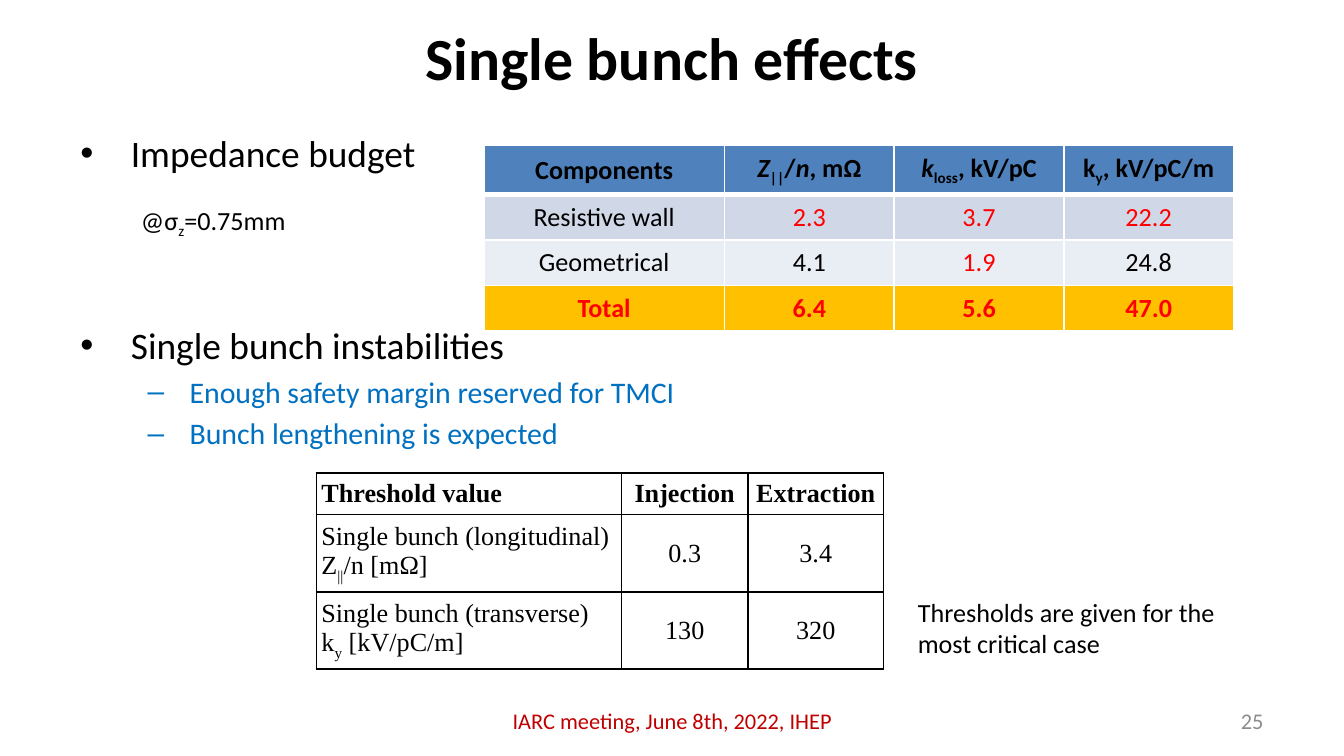
"""Build the slide on single bunch effects with its two tables."""
from lxml.etree import SubElement
from pptx import Presentation
from pptx.dml.color import RGBColor
from pptx.enum.text import MSO_ANCHOR as Anchor, PP_ALIGN as Align
from pptx.oxml import parse_xml
from pptx.oxml.ns import nsdecls, qn
from pptx.util import Pt

BLACK = RGBColor(0x00, 0x00, 0x00)
WHITE = RGBColor(0xFF, 0xFF, 0xFF)
RED = RGBColor(0xFF, 0x00, 0x00)
DARK_RED = RGBColor(0xC0, 0x00, 0x00)
GRAY = RGBColor(0x8C, 0x8C, 0x8C)
BLUE = RGBColor(0x00, 0x70, 0xC0)
HEADER_BLUE = RGBColor(0x4F, 0x81, 0xBD)
BAND_DARK = RGBColor(0xD0, 0xD8, 0xE8)
BAND_LIGHT = RGBColor(0xE9, 0xED, 0xF4)
GOLD = RGBColor(0xFF, 0xC0, 0x00)


def write(para, parts, size, color, bold=False, face="Calibri"):
    """Add runs; a part is plain text or a pair of text and 'sub' or 'italic'."""
    for part in [parts] if isinstance(parts, str) else parts:
        words, style = (part, "") if isinstance(part, str) else part
        span = para.add_run()
        span.text = words
        span.font.name, span.font.size = face, Pt(size)
        span.font.bold, span.font.color.rgb = bold, color
        if style == "italic":
            span.font.italic = True
        if style == "sub":
            span.font._element.set("baseline", "-25000")


def add_grid(page, left, top, widths, heights, border, margin):
    """Add an unstyled table with ruled cells and return it."""
    grid = page.shapes.add_table(len(heights), len(widths), Pt(left), Pt(top),
                                 Pt(sum(widths)), Pt(sum(heights))).table
    grid.first_row = grid.horz_banding = False
    for column, width in zip(grid.columns, widths):
        column.width = Pt(width)
    for row, height in zip(grid.rows, heights):
        row.height = Pt(height)
        for cell in row.cells:
            cell.vertical_anchor = Anchor.MIDDLE
            cell.margin_left = cell.margin_right = Pt(margin)
            cell.margin_top = cell.margin_bottom = Pt(min(margin, 3.6))
            cell.fill.background()
            for index, side in enumerate(("lnL", "lnR", "lnT", "lnB")):
                line = parse_xml(
                    f'<a:{side} {nsdecls("a")} w="{Pt(1)}"><a:solidFill>'
                    f'<a:srgbClr val="{border}"/></a:solidFill></a:{side}>')
                cell._tc.get_or_add_tcPr().insert(index, line)
    return grid


deck = Presentation()
deck.slide_width, deck.slide_height = Pt(720), Pt(405)
page = deck.slides.add_slide(deck.slide_layouts[5])

title = page.shapes.title
title.left, title.top, title.width, title.height = Pt(36), Pt(5), Pt(648), Pt(50.4)
title.text_frame.vertical_anchor = Anchor.MIDDLE
title.text_frame.paragraphs[0].alignment = Align.CENTER
write(title.text_frame.paragraphs[0], "Single bunch effects", 32, BLACK, True)

body = page.shapes.add_textbox(Pt(36), Pt(66.2), Pt(641.5), Pt(289.4)).text_frame
body.word_wrap = True
bullets = [
    ("Impedance budget", "•", 20, BLACK, 27, 27, 0),
    ("Single bunch instabilities", "•", 20, BLACK, 27, 27, 79),
    ("Enough safety margin reserved for TMCI", "–", 16, BLUE, 58.5, 22.5, 3.2),
    ("Bunch lengthening is expected", "–", 16, BLUE, 58.5, 22.5, 3.2),
]
for number, (words, mark, size, color, indent, hang, gap) in enumerate(bullets):
    para = body.add_paragraph() if number else body.paragraphs[0]
    props = para._p.get_or_add_pPr()
    props.set("marL", str(Pt(indent)))
    props.set("indent", str(-Pt(hang)))
    SubElement(props, qn("a:buFont")).set("typeface", "Arial")
    SubElement(props, qn("a:buChar")).set("char", mark)
    para.space_before = Pt(gap)
    write(para, words, size, color)

thresholds = [
    [["Threshold value"], ["Injection"], ["Extraction"]],
    [["Single bunch (longitudinal)", ["Z", ("||", "sub"), "/n [mΩ]"]], ["0.3"], ["3.4"]],
    [["Single bunch (transverse)", ["k", ("y", "sub"), " [kV/pC/m]"]], ["130"], ["320"]],
]
grid = add_grid(page, 169.5, 253.5, [163.5, 67.7, 72.7], [21.5, 38.8, 38.8], BLACK, 2.7)
for row, entries in enumerate(thresholds):
    for column, lines in enumerate(entries):
        frame = grid.cell(row, column).text_frame
        for number, parts in enumerate(lines):
            para = frame.add_paragraph() if number else frame.paragraphs[0]
            para.alignment = Align.CENTER if column else Align.LEFT
            write(para, parts, 14, BLACK, row == 0, "Times New Roman")

budget = [
    (HEADER_BLUE, True, [
        ("Components", BLACK),
        ([("Z", "italic"), ("||", "sub"), "/", ("n", "italic"), ", mΩ"], BLACK),
        ([("k", "italic"), ("loss", "sub"), ", kV/pC"], BLACK),
        (["k", ("y", "sub"), ", kV/pC/m"], BLACK)]),
    (BAND_DARK, False, [
        ("Resistive wall", BLACK), ("2.3", RED), ("3.7", RED), ("22.2", RED)]),
    (BAND_LIGHT, False, [
        ("Geometrical", BLACK), ("4.1", BLACK), ("1.9", RED), ("24.8", BLACK)]),
    (GOLD, True, [("Total", RED), ("6.4", RED), ("5.6", RED), ("47.0", RED)]),
]
grid = add_grid(page, 259.2, 78, [129] + [90.9] * 3, [25.7] + [24.3] * 3, WHITE, 7.2)
for row, (fill, bold, entries) in enumerate(budget):
    for column, (parts, color) in enumerate(entries):
        cell = grid.cell(row, column)
        cell.fill.solid()
        cell.fill.fore_color.rgb = fill
        if row < 2:
            edge = "a:lnT" if row else "a:lnB"
            cell._tc.tcPr.find(qn(edge)).set("w", str(Pt(3)))
        para = cell.text_frame.paragraphs[0]
        para.alignment = Align.CENTER
        write(para, parts, 14, color, bold)

labels = [
    ("Thresholds are given for the most critical case",
     484.6, 316, 195, 41, 14, BLACK, Align.LEFT, Anchor.TOP),
    (["@σ", ("z", "sub"), "=0.75mm"],
     68.4, 105.8, 195, 24.5, 14, BLACK, Align.LEFT, Anchor.TOP),
    ("IARC meeting, June 8th, 2022, IHEP",
     246.2, 375.1, 228.2, 21.6, 12, DARK_RED, Align.CENTER, Anchor.MIDDLE),
    ("25", 516.2, 375.1, 167.8, 21.6, 12, GRAY, Align.RIGHT, Anchor.MIDDLE),
]
for parts, left, top, width, height, size, color, align, anchor in labels:
    box = page.shapes.add_textbox(Pt(left), Pt(top), Pt(width), Pt(height))
    box.text_frame.word_wrap = True
    box.text_frame.vertical_anchor = anchor
    para = box.text_frame.paragraphs[0]
    para.alignment = align
    write(para, parts, size, color)

deck.save("out.pptx")
